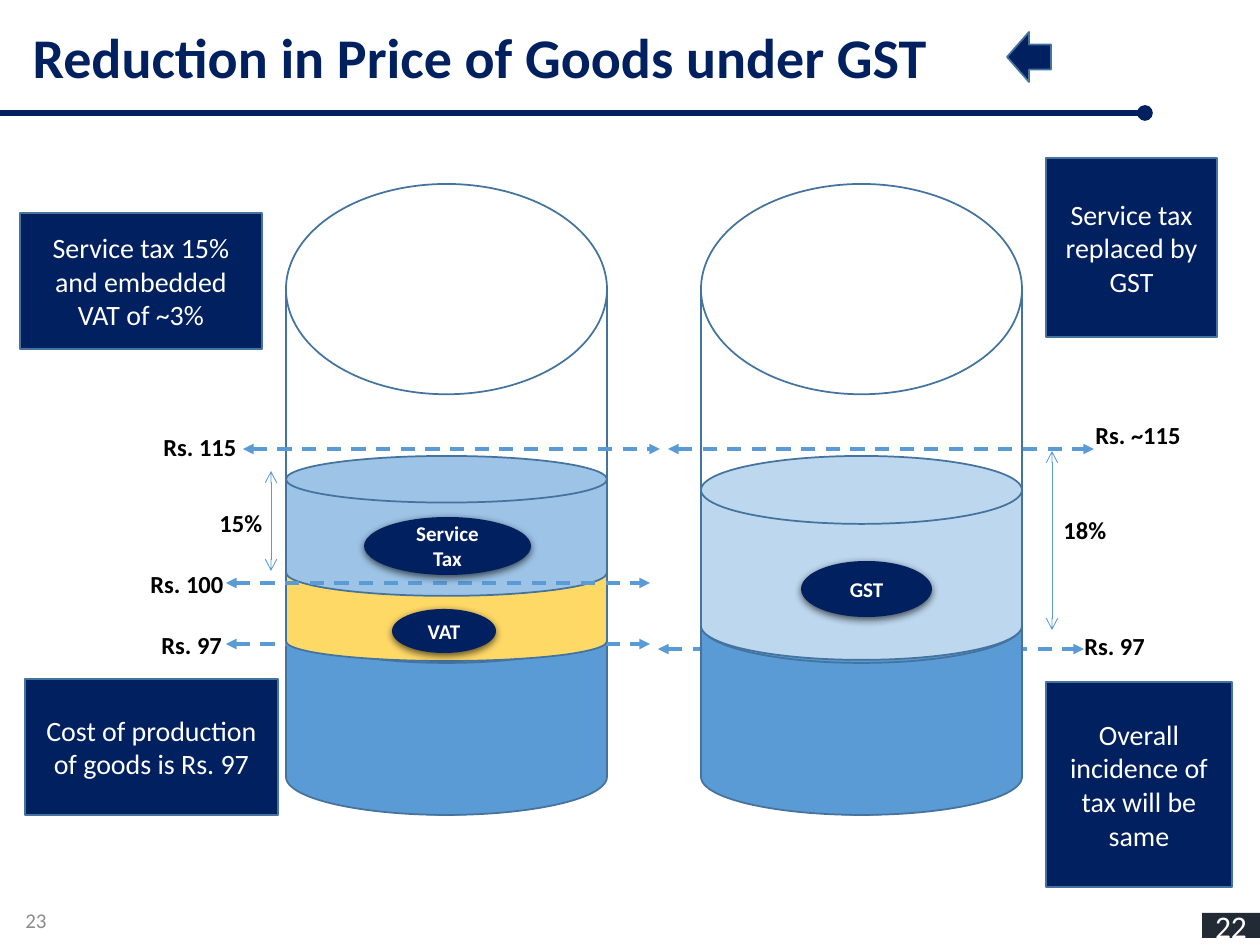
from dataclasses import dataclass

import pptx
import pptx.dml.color
import pptx.enum.dml
import pptx.enum.shapes
import pptx.enum.text
import pptx.oxml
import pptx.oxml.ns
import pptx.util

PX = 914400 / 126
SHAPES = pptx.enum.shapes.MSO_SHAPE
ALIGN = pptx.enum.text.PP_ALIGN
ANCHOR = pptx.enum.text.MSO_ANCHOR


@dataclass(frozen=True)
class Theme:
    font: str = "Calibri"
    navy: str = "002060"
    outline: str = "43739E"
    cost: str = "5B9BD5"
    vat: str = "FFD966"
    service: str = "9DC3E6"
    gst: str = "BDD7EE"
    black: str = "000000"
    white: str = "FFFFFF"
    grey: str = "8C8C8C"
    badge: str = "222A35"
    title_size: int = 32
    page_size: int = 18
    note_size: int = 16
    label_size: int = 14
    small_size: int = 12


THEME = Theme()


def px(*lengths):
    return [pptx.util.Emu(round(length * PX)) for length in lengths]


def rgb(value):
    return pptx.dml.color.RGBColor.from_string(value)


def drawing_xml(tag, attributes="", content=""):
    namespace = pptx.oxml.ns.nsdecls("a")
    return pptx.oxml.parse_xml(f"<a:{tag} {namespace} {attributes}>{content}</a:{tag}>")


def write(frame, text, size, color, bold=False, align=ALIGN.LEFT, anchor=ANCHOR.TOP, wrap=True):
    frame.text = text
    frame.word_wrap = wrap
    frame.vertical_anchor = anchor
    for paragraph in frame.paragraphs:
        paragraph.alignment = align
        font = paragraph.font
        font.name, font.size, font.bold = THEME.font, pptx.util.Pt(size), bold
        font.color.rgb = rgb(color)


def add_solid(slide, kind, box, fill=None, outline=THEME.outline):
    solid = slide.shapes.add_shape(kind, *px(*box))
    solid.shadow.inherit = False
    if fill:
        solid.fill.solid()
        solid.fill.fore_color.rgb = rgb(fill)
    else:
        solid.fill.background()
    if outline:
        solid.line.color.rgb = rgb(outline)
        solid.line.width = pptx.util.Pt(1)
    else:
        solid.line.fill.background()
    return solid


def add_note(slide, box, text):
    note = add_solid(slide, SHAPES.RECTANGLE, box, THEME.navy)
    write(note.text_frame, text, THEME.note_size, THEME.white,
          align=ALIGN.CENTER, anchor=ANCHOR.MIDDLE)


def add_tag(slide, box, text):
    """Oval with a soft shadow that names a layer of a cylinder."""
    tag = add_solid(slide, SHAPES.OVAL, box, THEME.navy, outline=None)
    write(tag.text_frame, text, THEME.small_size, THEME.white, bold=True,
          align=ALIGN.CENTER, anchor=ANCHOR.MIDDLE)
    effects = tag._element.spPr.find(pptx.oxml.ns.qn("a:effectLst"))
    effects.append(drawing_xml(
        "outerShdw", 'blurRad="57150" dist="19050" dir="5400000" algn="ctr" rotWithShape="0"',
        f'<a:srgbClr val="{THEME.black}"><a:alpha val="63000"/></a:srgbClr>'))


def add_label(slide, left, top, width, text):
    label = slide.shapes.add_textbox(*px(left, top, width, 42))
    write(label.text_frame, text, THEME.label_size, THEME.black, bold=True)


def add_line(slide, start, end, color, width, head=None, tail=None, dashed=False):
    line = slide.shapes.add_connector(
        pptx.enum.shapes.MSO_CONNECTOR.STRAIGHT, *px(*start, *end))
    line.line.color.rgb = rgb(color)
    line.line.width = pptx.util.Pt(width)
    if dashed:
        line.line.dash_style = pptx.enum.dml.MSO_LINE.DASH
    properties = line._element.spPr
    for tag, ending in (("headEnd", head), ("tailEnd", tail)):
        if ending:
            line.line._get_or_add_ln().append(drawing_xml(tag, f'type="{ending}"'))
    properties.append(drawing_xml("effectLst"))


def add_level(slide, left, right, y):
    """Dashed line that marks a price level across a cylinder."""
    add_line(slide, (left, y), (right, y), THEME.cost, 2, "triangle", "triangle", dashed=True)


def add_span(slide, x, top, bottom):
    """Thin vertical arrow that measures a tax rate."""
    add_line(slide, (x, top), (x, bottom), THEME.cost, 0.5, "arrow", "arrow")


def add_title(slide, text):
    title = slide.shapes.title
    title.left, title.top, title.width, title.height = px(20, 16, 929, 81)
    write(title.text_frame, text, THEME.title_size, THEME.navy, bold=True, wrap=False)
    title.text_frame.auto_size = pptx.enum.text.MSO_AUTO_SIZE.NONE
    add_line(slide, (0, 113), (1145, 113), THEME.navy, 3, tail="oval")
    add_solid(slide, SHAPES.LEFT_ARROW, (1007, 32, 44, 50), THEME.navy)


def add_cylinders(slide):
    before, after, width, floor = 286, 701, 321, 815

    def add_layer(left, top, bottom, fill=None):
        add_solid(slide, SHAPES.FLOWCHART_MAGNETIC_DISK,
                  (left, top, width, bottom - top), fill)

    for left in (before, after):
        add_layer(left, 184, floor)
    add_level(slide, 658, 1084, 649)
    for left in (before, after):
        add_layer(left, 587, floor, THEME.cost)
    add_level(slide, 226, 650, 644)
    add_layer(before, 543, 661, THEME.vat)
    add_layer(before, 456, 596, THEME.service)
    add_layer(after, 456, 660, THEME.gst)
    add_level(slide, 243, 660, 449)
    add_level(slide, 668, 1094, 449)
    add_level(slide, 226, 650, 583)
    add_span(slide, 271, 471, 571)
    add_span(slide, 1052, 451, 630)


def add_page_numbers(slide):
    footer = slide.shapes.add_textbox(*px(0, 895, 59, 50))
    write(footer.text_frame, "23", THEME.small_size, THEME.grey,
          align=ALIGN.RIGHT, anchor=ANCHOR.MIDDLE)
    badge = add_solid(slide, SHAPES.RECTANGLE, (1202, 913, 58, 25), THEME.badge, outline=None)
    write(badge.text_frame, "22", THEME.page_size, THEME.white,
          align=ALIGN.CENTER, anchor=ANCHOR.MIDDLE)


def main():
    deck = pptx.Presentation()
    deck.slide_width, deck.slide_height = px(1260, 945)
    slide = deck.slides.add_slide(deck.slide_layouts.get_by_name("Title Only"))
    add_title(slide, "Reduction in Price of Goods under GST")
    add_cylinders(slide)

    for box, text in (
        ((20, 213, 242, 136), "Service tax 15% and embedded VAT of ~3%"),
        ((25, 679, 253, 136), "Cost of production of goods is Rs. 97"),
        ((1046, 158, 171, 179), "Service tax replaced by GST"),
        ((1046, 682, 186, 205), "Overall incidence of tax will be same"),
    ):
        add_note(slide, box, text)

    for box, text in (
        ((364, 517, 167, 58), "Service\nTax"),
        ((392, 609, 104, 44), "VAT"),
        ((801, 561, 131, 56), "GST"),
    ):
        add_tag(slide, box, text)

    for left, top, width, text in (
        (151, 426, 136, "Rs. 115"),
        (207, 502, 72, "15%"),
        (138, 563, 136, "Rs. 100"),
        (149, 624, 125, "Rs. 97"),
        (1083, 414, 136, "Rs. ~115"),
        (1051, 509, 72, "18%"),
        (1072, 625, 136, "Rs. 97"),
    ):
        add_label(slide, left, top, width, text)

    add_page_numbers(slide)
    deck.save("out.pptx")


if __name__ == "__main__":
    main()
